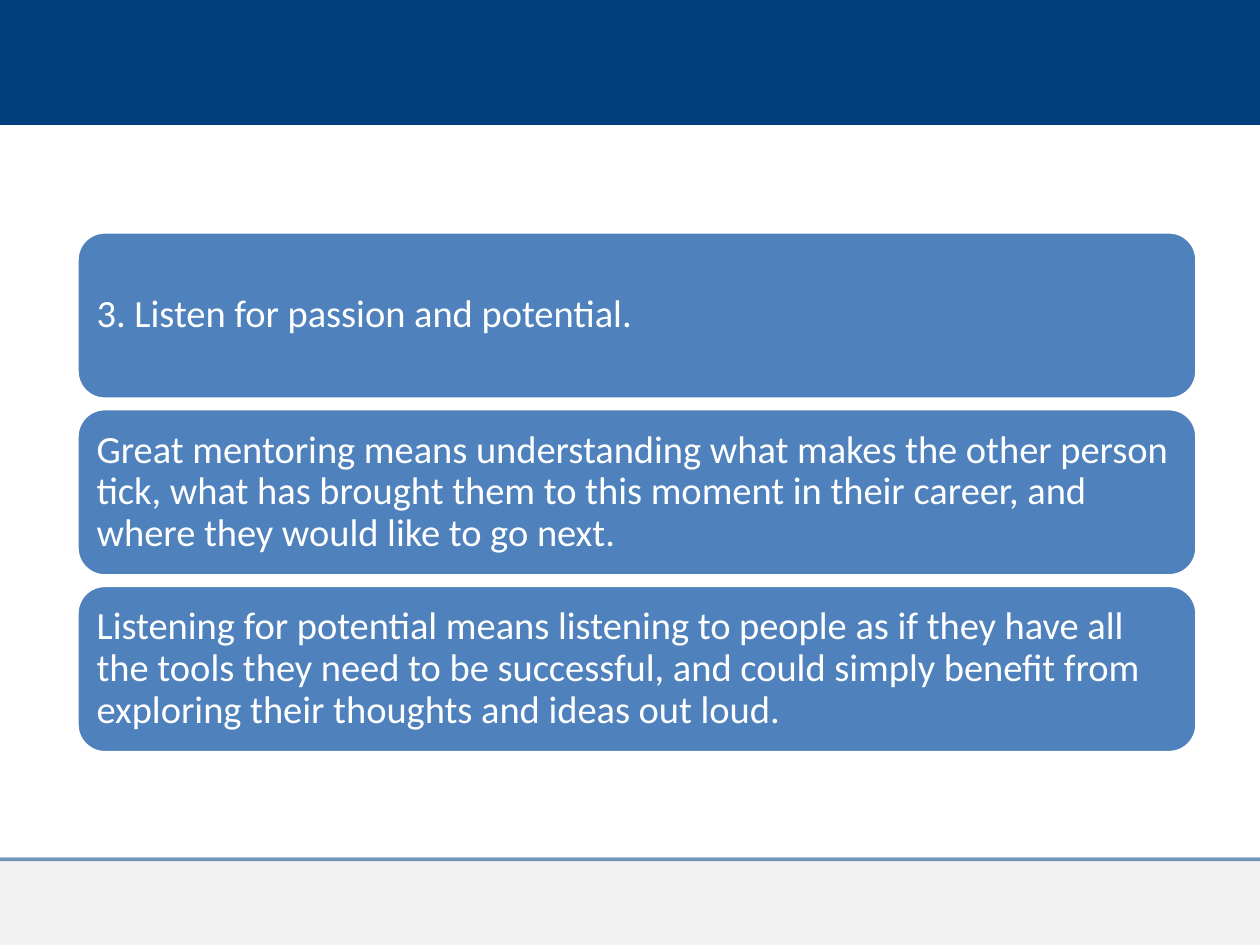
"""Build a slide with three stacked mentoring tips between a header and a footer band."""
from lxml import etree
from pptx import Presentation
from pptx.dml.color import RGBColor
from pptx.enum import shapes, text
from pptx.oxml.ns import qn
from pptx.util import Pt

NAVY = RGBColor(0x00, 0x3E, 0x7E)
GREY = RGBColor(0x80, 0x80, 0x80)
BLUE = RGBColor(0x4F, 0x81, 0xBD)
WHITE = RGBColor(0xFF, 0xFF, 0xFF)

TIPS = [
    "3. Listen for passion and potential.",
    "Great mentoring means understanding what makes the other person tick, "
    "what has brought them to this moment in their career, and where they "
    "would like to go next.",
    "Listening for potential means listening to people as if they have all "
    "the tools they need to be successful, and could simply benefit from "
    "exploring their thoughts and ideas out loud.",
]


def add_box(kind, left, top, width, height, fill):
    box = slide.shapes.add_shape(kind, Pt(left), Pt(top), Pt(width), Pt(height))
    box.shadow.inherit = False
    box.fill.solid()
    box.fill.fore_color.rgb = fill
    box.line.fill.background()
    return box


def set_alpha(shape, percent):
    color = next(shape.element.spPr.iter(qn("a:srgbClr")))
    etree.SubElement(color, qn("a:alpha")).set("val", str(percent * 1000))


deck = Presentation()
deck.slide_width, deck.slide_height = Pt(720), Pt(540)
slide = deck.slides.add_slide(deck.slide_layouts[6])

RECT = shapes.MSO_SHAPE.RECTANGLE
ROUND = shapes.MSO_SHAPE.ROUNDED_RECTANGLE

add_box(RECT, 0, 0, 720, 71.4, NAVY)
foot = add_box(RECT, 0, 491, 720, 49, GREY)
set_alpha(foot, 10)

rule = slide.shapes.add_connector(
    shapes.MSO_CONNECTOR.STRAIGHT, Pt(0), Pt(491), Pt(720), Pt(491))
rule.line.color.rgb = NAVY
rule.line.width = Pt(2.25)
set_alpha(rule, 52)
etree.SubElement(rule.element.spPr, qn("a:effectLst"))

for row, tip in enumerate(TIPS):
    card = add_box(ROUND, 44, 132.5 + row * 101, 640, 95.6, BLUE)
    card.line.color.rgb = WHITE
    card.line.width = Pt(2)
    frame = card.text_frame
    frame.word_wrap = True
    frame.vertical_anchor = text.MSO_ANCHOR.MIDDLE
    frame.margin_left = frame.margin_right = Pt(6.6)
    frame.margin_top = frame.margin_bottom = Pt(6.6)
    frame.text = tip
    para = frame.paragraphs[0]
    para.alignment = text.PP_ALIGN.LEFT
    para.line_spacing = 0.9
    font = para.runs[0].font
    font.name = "Calibri"
    font.size = Pt(22)
    font.color.rgb = WHITE

deck.save("out.pptx")
